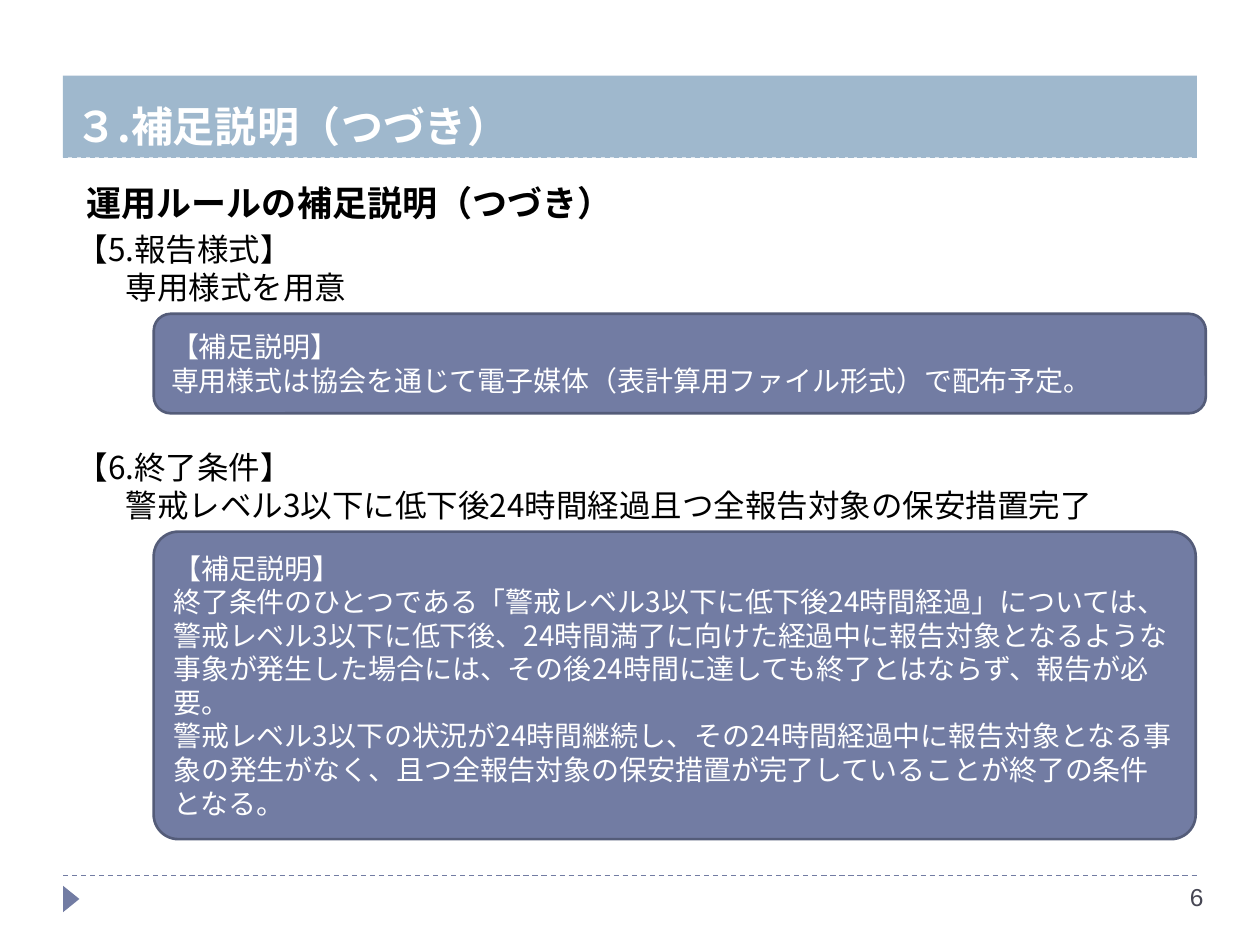
from dataclasses import dataclass

from lxml import etree
from pptx import Presentation
from pptx import util as u
from pptx.dml.color import RGBColor
from pptx.enum import dml, lang, shapes, text
from pptx.oxml.ns import qn


@dataclass(frozen=True)
class Theme:
    japanese: str = "Noto Sans CJK JP"
    latin: str = "Arial"
    white: str = "FFFFFF"
    black: str = "000000"
    band: str = "9FB8CD"
    accent: str = "727CA3"
    outline: str = "545C79"
    number: str = "464653"
    title_size: int = 24
    heading_size: int = 20
    rule_size: int = 18
    note_size: int = 16
    number_size: int = 14


class SlideBuilder:
    def __init__(self, slide, theme):
        self.slide = slide
        self.theme = theme

    def add_run(self, paragraph, content, size, color, font_name=None, bold=False):
        run = paragraph.add_run()
        run.text = content
        font = run.font
        font.size = u.Pt(size)
        font.bold = bold
        font.color.rgb = RGBColor.from_string(color)
        font.name = font_name or self.theme.japanese
        font.language_id = lang.MSO_LANGUAGE_ID.JAPANESE
        east_asian = etree.SubElement(run._r.get_or_add_rPr(), qn("a:ea"))
        east_asian.set("typeface", font.name)

    def add_lines(self, frame, lines, size, color, align=text.PP_ALIGN.LEFT,
                  spacing=None, later_indent=0, **run_style):
        """Add one paragraph per line, indenting all but the first."""
        frame.word_wrap = True
        for index, line in enumerate(lines):
            paragraph = frame.add_paragraph() if index else frame.paragraphs[0]
            paragraph.alignment = align
            paragraph.line_spacing = spacing
            properties = paragraph._p.get_or_add_pPr()
            properties.set("hangingPunct", "1")
            if index and later_indent:
                properties.set("marL", str(u.Inches(later_indent)))
                properties.set("indent", "0")
            self.add_run(paragraph, line, size, color, **run_style)

    def text_box(self, box, lines, size, color, **style):
        frame = self.slide.shapes.add_textbox(*map(u.Inches, box)).text_frame
        self.add_lines(frame, lines, size, color, **style)

    def shape(self, kind, box, fill, outline=None):
        shape = self.slide.shapes.add_shape(kind, *map(u.Inches, box))
        shape.shadow.inherit = False
        shape.fill.solid()
        shape.fill.fore_color.rgb = RGBColor.from_string(fill)
        if outline:
            shape.line.color.rgb = RGBColor.from_string(outline)
            shape.line.width = u.Pt(1.5)
        else:
            shape.line.fill.background()
        return shape

    def dashed_rule(self, y, color):
        rule = self.slide.shapes.add_connector(
            shapes.MSO_CONNECTOR.STRAIGHT, *map(u.Inches, (0.5, y, 9.5, y)))
        rule.line.color.rgb = RGBColor.from_string(color)
        rule.line.width = u.Pt(0.75)
        rule.line.dash_style = dml.MSO_LINE.DASH
        etree.SubElement(rule._element.spPr, qn("a:effectLst"))

    def page_marker(self, box):
        marker = self.shape(shapes.MSO_SHAPE.ISOSCELES_TRIANGLE, box, self.theme.accent)
        marker.rotation = 90

    def title_band(self, box, title):
        band = self.shape(shapes.MSO_SHAPE.RECTANGLE, box, self.theme.band)
        band.text_frame.vertical_anchor = text.MSO_ANCHOR.BOTTOM
        self.add_lines(band.text_frame, [title], self.theme.title_size,
                       self.theme.white, bold=True)

    def rule_text(self, box, lines):
        self.text_box(box, lines, self.theme.rule_size, self.theme.black,
                      later_indent=0.39)

    def note(self, box, lines, corner):
        panel = self.shape(shapes.MSO_SHAPE.ROUNDED_RECTANGLE, box,
                           self.theme.accent, self.theme.outline)
        panel.adjustments[0] = corner
        panel.text_frame.vertical_anchor = text.MSO_ANCHOR.MIDDLE
        self.add_lines(panel.text_frame, ["【補足説明】", *lines],
                       self.theme.note_size, self.theme.white)


def main():
    deck = Presentation()
    deck.slide_width, deck.slide_height = u.Inches(10), u.Inches(7.5)
    theme = Theme()
    page = SlideBuilder(deck.slides.add_slide(deck.slide_layouts[6]), theme)

    page.dashed_rule(6.95, theme.accent)
    page.dashed_rule(1.25, theme.band)
    page.page_marker((0.46, 7.07, 0.21, 0.13))
    page.title_band((0.5, 0.6, 9, 0.65), "３.補足説明（つづき）")
    page.text_box((7.48, 6.95, 2.17, 0.4), ["6"], theme.number_size, theme.number,
                  align=text.PP_ALIGN.RIGHT, font_name=theme.latin)
    page.text_box((0.59, 1.31, 8.74, 0.47), ["運用ルールの補足説明（つづき）"],
                  theme.heading_size, theme.black, spacing=1.25, bold=True)

    page.rule_text((0.51, 1.78, 9.13, 0.71), ["【5.報告様式】", "専用様式を用意"])
    page.note((1.22, 2.49, 8.35, 0.79), [
        "専用様式は協会を通じて電子媒体（表計算用ファイル形式）で配布予定。",
    ], corner=0.17)

    page.rule_text((0.51, 3.51, 9.06, 0.71), [
        "【6.終了条件】",
        "警戒レベル3以下に低下後24時間経過且つ全報告対象の保安措置完了",
    ])
    page.note((1.22, 4.22, 8.27, 2.44), [
        "終了条件のひとつである「警戒レベル3以下に低下後24時間経過」については、"
        "警戒レベル3以下に低下後、24時間満了に向けた経過中に報告対象となるような"
        "事象が発生した場合には、その後24時間に達しても終了とはならず、報告が必要。",
        "警戒レベル3以下の状況が24時間継続し、その24時間経過中に報告対象となる事象の"
        "発生がなく、且つ全報告対象の保安措置が完了していることが終了の条件となる。",
    ], corner=0.08)

    deck.save("out.pptx")


if __name__ == "__main__":
    main()
